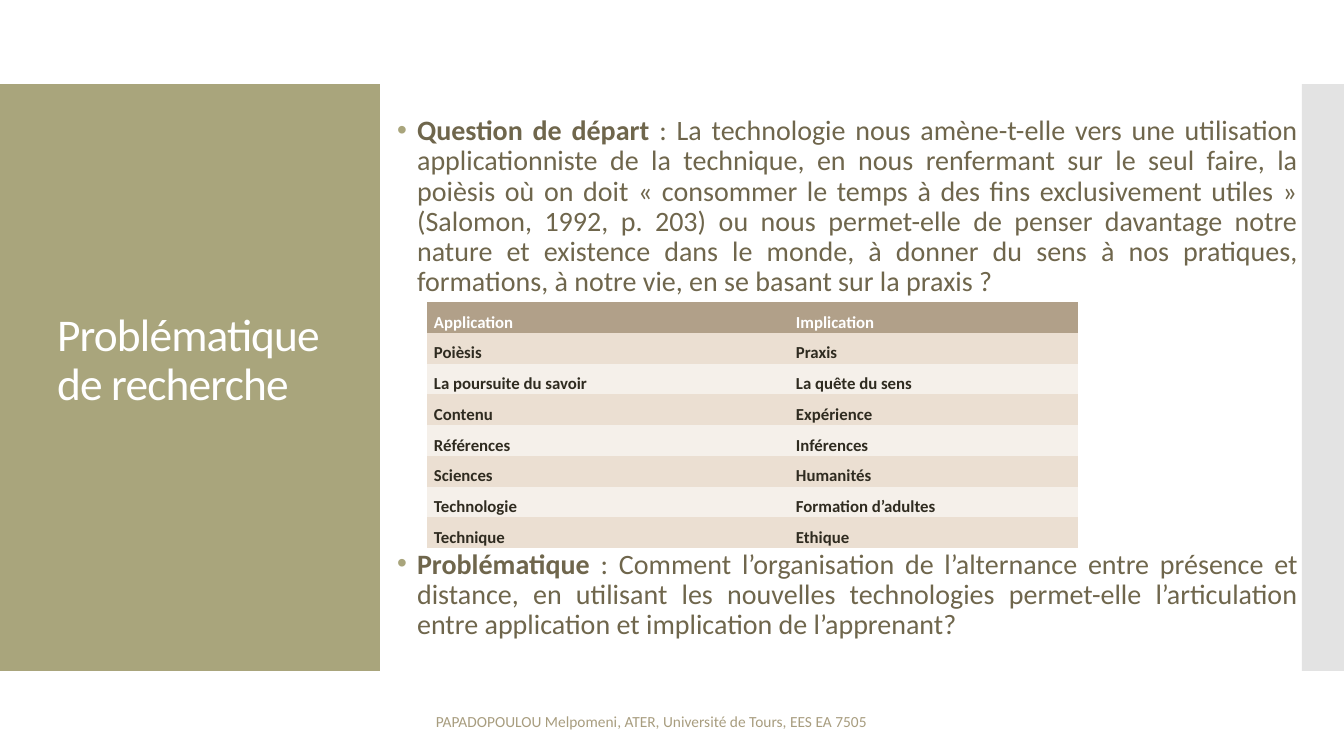
"""Build the slide on the research question, with its two paragraphs and comparison table."""
from lxml.etree import SubElement
from pptx import Presentation
from pptx.dml.color import RGBColor
from pptx.enum.shapes import MSO_SHAPE
from pptx.enum.text import MSO_ANCHOR, MSO_AUTO_SIZE, PP_ALIGN
from pptx.oxml.ns import qn
from pptx.util import Pt

TITLE = "Problématique de recherche"
QUESTIONS = [
    ("Question de départ",
     " : La technologie nous amène-t-elle vers une utilisation applicationniste de la "
     "technique, en nous renfermant sur le seul faire, la poièsis où on doit "
     "« consommer le temps à des fins exclusivement utiles » (Salomon, 1992, p. 203) "
     "ou nous permet-elle de penser davantage notre nature et existence dans le monde, "
     "à donner du sens à nos pratiques, formations, à notre vie, en se basant sur la "
     "praxis ?"),
    ("Problématique",
     " : Comment l’organisation de l’alternance entre présence et distance, en utilisant "
     "les nouvelles technologies permet-elle l’articulation entre application et "
     "implication de l’apprenant?"),
]
COMPARISON = [
    ("Application", "Implication"),
    ("Poièsis", "Praxis"),
    ("La poursuite du savoir", "La quête du sens"),
    ("Contenu", "Expérience"),
    ("Références", "Inférences"),
    ("Sciences", "Humanités"),
    ("Technologie", "Formation d’adultes"),
    ("Technique", "Ethique"),
]
FOOTER = "PAPADOPOULOU Melpomeni, ATER, Université de Tours, EES EA 7505"

FONT = "Calibri"
COLORS = {
    "olive": "A9A57C", "strip": "C8C8C8", "white": "FFFFFF", "body": "6F664C",
    "footer": "A89D7F", "header": "B1A089", "dark_band": "EBDFD2",
    "light_band": "F5F0EA", "cell": "2F2B20",
}
SLIDE_W, SLIDE_H = 1344, 756
BAND_TOP, BAND_H = 84, 587
LEFT_PANEL_W, RIGHT_STRIP_W = 380, 42
TABLE_LEFT, TABLE_TOP, ROW_H = 427, 302, 30
COLUMN_WIDTHS = (362, 289)
BULLET_INDENT = 20
TABLE_GAP = 252
NO_STYLE = "{2D5ABB26-0587-4C30-8999-92F81FD0307C}"


def px(length):
    return round(length * 914400 / 100.8)


def color(name):
    return RGBColor.from_string(COLORS[name])


def place(shape, left, top, width, height):
    shape.left, shape.top, shape.width, shape.height = map(px, (left, top, width, height))


def add_run(paragraph, text, size, color_name, bold=False):
    run = paragraph.add_run()
    run.text = text
    run.font.name, run.font.size, run.font.bold = FONT, Pt(size), bold
    run.font.color.rgb = color(color_name)
    return run


def set_frame(shape):
    frame = shape.text_frame
    frame.word_wrap = True
    frame.auto_size = MSO_AUTO_SIZE.NONE
    frame.vertical_anchor = MSO_ANCHOR.MIDDLE
    return frame


def add_panel(slide, left, width, color_name):
    panel = slide.shapes.add_shape(
        MSO_SHAPE.RECTANGLE, px(left), px(BAND_TOP), px(width), px(BAND_H))
    panel.shadow.inherit = False
    panel.fill.solid()
    panel.fill.fore_color.rgb = color(color_name)
    panel.line.fill.background()
    slide.shapes._spTree.insert(2, panel._element)
    return panel


def add_bullet(paragraph):
    properties = paragraph._p.get_or_add_pPr()
    properties.set("marL", str(px(BULLET_INDENT)))
    properties.set("indent", str(-px(BULLET_INDENT)))
    bullet_color = SubElement(properties, qn("a:buClr"))
    SubElement(bullet_color, qn("a:srgbClr"), val=COLORS["olive"])
    SubElement(properties, qn("a:buFont"), typeface="Arial")
    SubElement(properties, qn("a:buChar"), char="•")


def fill_title(title):
    place(title, 47, 319, 316, 84)
    paragraph = set_frame(title).paragraphs[0]
    paragraph.alignment = PP_ALIGN.LEFT
    paragraph.line_spacing = 0.9
    run = add_run(paragraph, TITLE, 32.4, "white")
    run.font._element.set("spc", "-60")


def fill_questions(body):
    place(body, 387, 85, 921, 587)
    frame = set_frame(body)
    for index, (label, question) in enumerate(QUESTIONS):
        paragraph = frame.add_paragraph() if index else frame.paragraphs[0]
        paragraph.alignment = PP_ALIGN.JUSTIFY
        paragraph.line_spacing = 0.9
        paragraph.space_before = px(TABLE_GAP) if index else Pt(0)
        add_bullet(paragraph)
        add_run(paragraph, label, 20, "body", bold=True)
        add_run(paragraph, question, 20, "body")


def add_comparison(slide):
    table = slide.shapes.add_table(
        len(COMPARISON), len(COLUMN_WIDTHS), px(TABLE_LEFT), px(TABLE_TOP),
        px(sum(COLUMN_WIDTHS)), px(ROW_H * len(COMPARISON))).table
    table.first_row = table.horz_banding = False
    table._tbl.tblPr.find(qn("a:tableStyleId")).text = NO_STYLE
    for column, width in zip(table.columns, COLUMN_WIDTHS):
        column.width = px(width)
    for row, words in enumerate(COMPARISON):
        band = "header" if row == 0 else "dark_band" if row % 2 else "light_band"
        for column, word in enumerate(words):
            cell = table.cell(row, column)
            cell.fill.solid()
            cell.fill.fore_color.rgb = color(band)
            cell.margin_left = cell.margin_right = px(7)
            cell.margin_top = cell.margin_bottom = 0
            paragraph = cell.text_frame.paragraphs[0]
            paragraph.alignment = PP_ALIGN.JUSTIFY
            paragraph.line_spacing = 1.5
            paragraph.space_after = Pt(6)
            add_run(paragraph, word, 12, "cell" if row else "white", bold=True)


def add_footer(slide):
    footer = slide.shapes.add_textbox(px(426), px(701), px(651), px(40))
    add_run(set_frame(footer).paragraphs[0], FOOTER, 11, "footer")


def main():
    presentation = Presentation()
    presentation.slide_width, presentation.slide_height = px(SLIDE_W), px(SLIDE_H)
    slide = presentation.slides.add_slide(presentation.slide_layouts[1])
    add_panel(slide, 0, LEFT_PANEL_W, "olive")
    strip = add_panel(slide, SLIDE_W - RIGHT_STRIP_W, RIGHT_STRIP_W, "strip")
    strip_color = strip._element.spPr.find(qn("a:solidFill"))[0]
    SubElement(strip_color, qn("a:alpha"), val="50000")
    fill_title(slide.shapes.title)
    fill_questions(slide.placeholders[1])
    add_comparison(slide)
    add_footer(slide)
    presentation.save("out.pptx")


if __name__ == "__main__":
    main()
